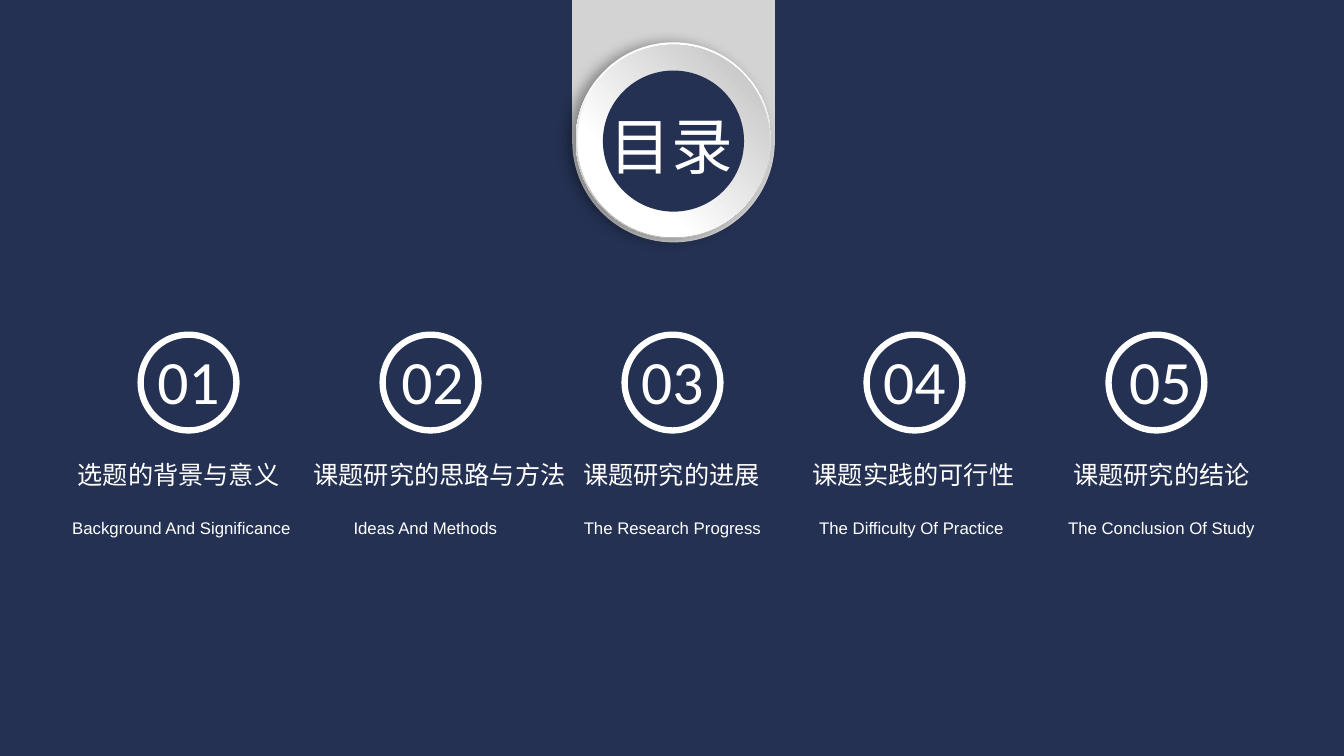
from lxml import etree
from pptx import Presentation
from pptx.dml.color import RGBColor
from pptx.enum.shapes import MSO_SHAPE
from pptx.enum.text import PP_ALIGN
from pptx.oxml import parse_xml
from pptx.oxml.ns import nsdecls, qn
from pptx.util import Inches, Pt

RECT = MSO_SHAPE.RECTANGLE
OVAL = MSO_SHAPE.OVAL
CENTER = PP_ALIGN.CENTER

SLIDE_W, SLIDE_H = 13.33, 7.5
NAVY, SILVER, WHITE = "243152", "D3D3D3", "FFFFFF"
CJK, LATIN, DIGITS = "Noto Sans CJK SC", "Arial", "Calibri"

FIRST_CENTER, PITCH = 1.87, 2.4
TOPICS_TOP = 3.32
RING = 0.95
LABEL_W = 2.8

# number, title, subtitle, and how far each of the three sits from its column's centre
TOPICS = [
    ("01", "选题的背景与意义", "Background And Significance", (0, -0.1, -0.07)),
    ("02", "课题研究的思路与方法", "Ideas And Methods", (0.02, 0.09, -0.05)),
    ("03", "课题研究的进展", "The Research Progress", (0, -0.01, 0)),
    ("04", "课题实践的可行性", "The Difficulty Of Practice", (0, -0.01, -0.03)),
    ("05", "课题研究的结论", "The Conclusion Of Study", (0.04, 0.05, 0.05)),
]


def color(hex_color):
    return RGBColor.from_string(hex_color)


def add_shape(slide, kind, x, y, w, h, fill=None):
    sp = slide.shapes.add_shape(kind, Inches(x), Inches(y), Inches(w), Inches(h))
    sp.shadow.inherit = False
    sp.line.fill.background()
    if fill:
        sp.fill.solid()
        sp.fill.fore_color.rgb = color(fill)
    else:
        sp.fill.background()
    return sp


def add_disc(slide, cx, cy, diameter, fill=None):
    r = diameter / 2
    return add_shape(slide, OVAL, cx - r, cy - r, diameter, diameter, fill)


def set_gradient(sp, angle, *stops):
    """Linear gradient of two (position, colour) stops; angle is counter-clockwise."""
    sp.fill.gradient()
    sp.fill.gradient_angle = angle
    for stop, (position, hex_color) in zip(sp.fill.gradient_stops, stops):
        stop.position = position
        stop.color.rgb = color(hex_color)


def add_soft_shadow(sp, blur, distance, direction, opacity):
    effects = sp.fill._xPr.find(qn("a:effectLst"))
    effects.append(parse_xml(
        f'<a:outerShdw {nsdecls("a")} blurRad="{Pt(blur)}" dist="{Pt(distance)}" '
        f'dir="{direction * 60000}" algn="ctr" rotWithShape="0">'
        f'<a:srgbClr val="000000"><a:alpha val="{opacity * 1000}"/></a:srgbClr>'
        '</a:outerShdw>'))


def add_label(slide, text, cx, y, w, h, size, font):
    """White text centred on cx."""
    box = slide.shapes.add_textbox(Inches(cx - w / 2), Inches(y), Inches(w), Inches(h))
    tf = box.text_frame
    tf.word_wrap = True
    p = tf.paragraphs[0]
    p.alignment = CENTER
    r = p.add_run()
    r.text = text
    r.font.size = Pt(size)
    r.font.name = font
    r.font.color.rgb = color(WHITE)
    etree.SubElement(r._r.get_or_add_rPr(), qn("a:ea")).set("typeface", font)


def add_heading_badge(slide, cx, cy):
    """Ribbon hanging from the top edge, ending in a raised ring with the heading."""
    width = 2.01
    add_shape(slide, RECT, cx - width / 2, 0, width, cy, SILVER)
    add_disc(slide, cx, cy, width, SILVER)

    rim = add_disc(slide, cx, cy - 0.01, 1.94)
    set_gradient(rim, 270, (0.17, WHITE), (0.88, "B8B8B8"))
    add_soft_shadow(rim, 10, 5, 170, 39)

    face = add_disc(slide, cx, cy, 1.91)
    set_gradient(face, 45, (0.29, WHITE), (0.98, "BFBFBF"))

    add_disc(slide, cx, cy, 1.4, NAVY)
    add_label(slide, "目录", cx - 0.02, cy - 0.38, 2.21, 0.84, 44, CJK)


def add_topic(slide, cx, top, number, title, subtitle, shifts):
    ring = add_disc(slide, cx, top + RING / 2, RING)
    ring.line.color.rgb = color(WHITE)
    ring.line.width = Pt(4.5)
    number_dx, title_dx, subtitle_dx = shifts
    add_label(slide, number, cx + number_dx, top + 0.03, 0.87, 0.84, 44, DIGITS)
    add_label(slide, title, cx + title_dx, top + 1.19, LABEL_W, 0.4, 18, CJK)
    add_label(slide, subtitle, cx + subtitle_dx, top + 1.77, LABEL_W, 0.3, 12, LATIN)


def main():
    prs = Presentation()
    prs.slide_width, prs.slide_height = Inches(SLIDE_W), Inches(SLIDE_H)
    slide = prs.slides.add_slide(prs.slide_layouts[6])
    slide.background.fill.solid()
    slide.background.fill.fore_color.rgb = color(NAVY)

    add_heading_badge(slide, 6.68, 1.4)
    for i, topic in enumerate(TOPICS):
        add_topic(slide, FIRST_CENTER + i * PITCH, TOPICS_TOP, *topic)

    prs.save("out.pptx")


if __name__ == "__main__":
    main()
